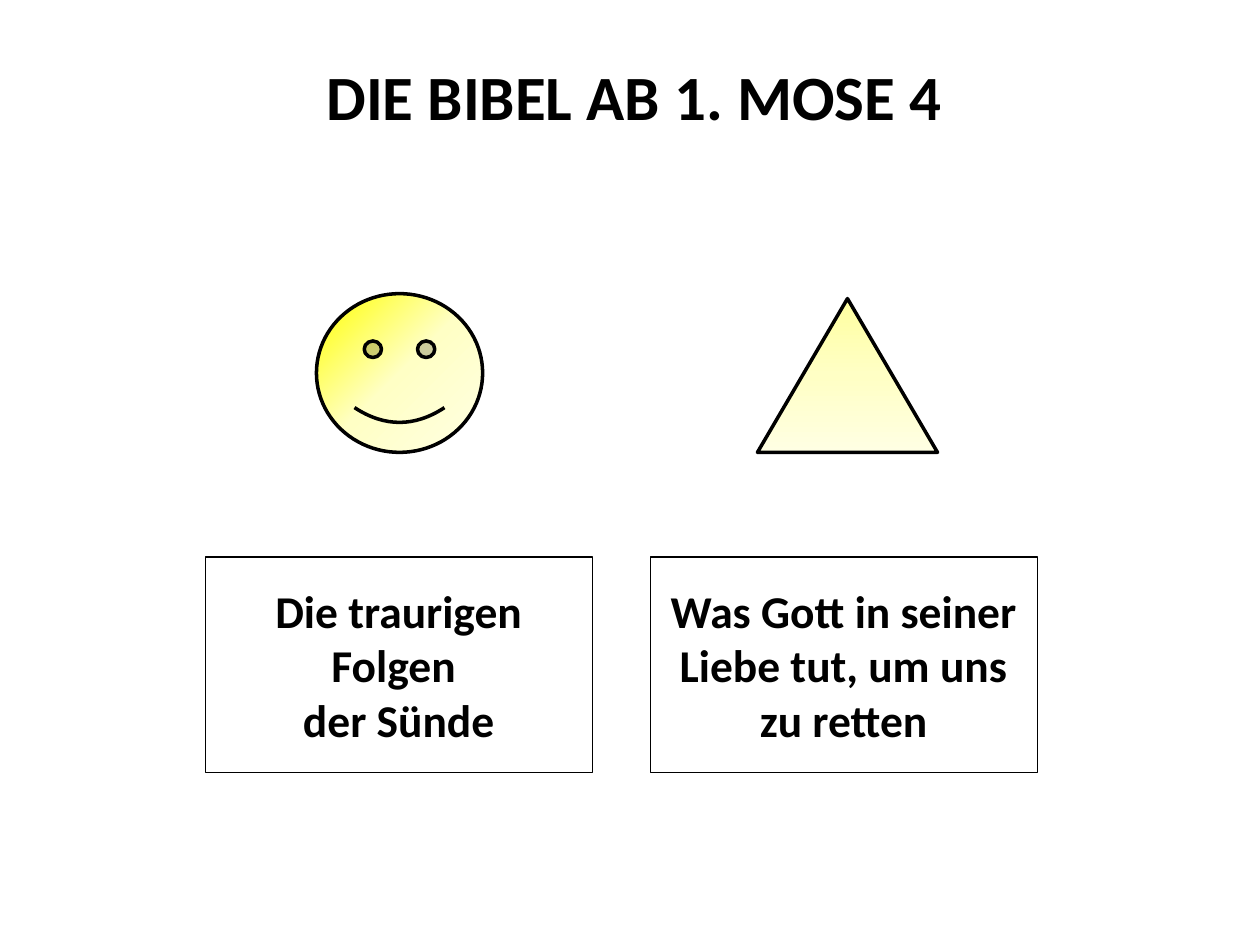
import pptx
import pptx.util
import pptx.oxml
import pptx.oxml.ns
import pptx.dml.color
import pptx.enum.shapes
import pptx.enum.text
import lxml.etree

Cm = pptx.util.Cm
Pt = pptx.util.Pt
SHAPES = pptx.enum.shapes.MSO_SHAPE
COLORS = {
    "text": "000000",
    "line": "000000",
    "paper": "FFFFFF",
    "yellow": "FFFF00",
    "pale": "FFFFA0",
    "cream": "FFFFC5",
    "ivory": "FFFFE3",
}


def color(name):
    return pptx.dml.color.RGBColor.from_string(COLORS[name])


def write_lines(frame, lines, size):
    frame.word_wrap = True
    frame.vertical_anchor = pptx.enum.text.MSO_ANCHOR.MIDDLE
    para = frame.paragraphs[0]
    para.alignment = pptx.enum.text.PP_ALIGN.CENTER
    for index, line in enumerate(lines):
        if index:
            para.add_line_break()
        span = para.add_run()
        span.text = line
        span.font.name = "Calibri"
        span.font.size = Pt(size)
        span.font.bold = True
        span.font.color.rgb = color("text")


def outline(shape, width):
    shape.shadow.inherit = False
    shape.line.color.rgb = color("line")
    shape.line.width = Pt(width)


def fill_gradient(shape, stops, angle):
    stop_xml = "".join(
        f'<a:gs pos="{index * 50000}"><a:srgbClr val="{COLORS[name]}"/></a:gs>'
        for index, name in enumerate(stops)
    )
    gradient = pptx.oxml.parse_xml(
        f'<a:gradFill {pptx.oxml.ns.nsdecls("a")} rotWithShape="1">'
        f'<a:gsLst>{stop_xml}</a:gsLst>'
        f'<a:lin ang="{angle * 60000}" scaled="0"/></a:gradFill>'
    )
    geometry = shape._element.spPr.find(pptx.oxml.ns.qn("a:prstGeom"))
    geometry.addnext(gradient)


def place_title(page, left, top, width, height):
    title = page.shapes.title
    title.left, title.top = Cm(left), Cm(top)
    title.width, title.height = Cm(width), Cm(height)
    title.fill.solid()
    title.fill.fore_color.rgb = color("paper")
    paper = title._element.spPr.find(".//" + pptx.oxml.ns.qn("a:srgbClr"))
    lxml.etree.SubElement(paper, pptx.oxml.ns.qn("a:alpha"), val="60000")
    title.text_frame.auto_size = pptx.enum.text.MSO_AUTO_SIZE.NONE
    write_lines(title.text_frame, ["DIE BIBEL AB 1. MOSE 4"], 36)


def place_theme(page, left, top, width, height, theme):
    inset_x, inset_y, symbol_width, symbol_height = theme["inset"]
    symbol = page.shapes.add_shape(
        theme["symbol"], Cm(left + inset_x), Cm(top + inset_y),
        Cm(symbol_width), Cm(symbol_height),
    )
    outline(symbol, 2)
    fill_gradient(symbol, theme["stops"], theme["angle"])

    caption_height = 4.34
    caption = page.shapes.add_shape(
        SHAPES.RECTANGLE, Cm(left), Cm(top + height - caption_height),
        Cm(width), Cm(caption_height),
    )
    outline(caption, 0.75)
    caption.fill.background()
    frame = caption.text_frame
    frame.margin_left = frame.margin_right = Cm(0.25)
    frame.margin_top = frame.margin_bottom = Cm(0.51)
    frame.auto_size = pptx.enum.text.MSO_AUTO_SIZE.SHAPE_TO_FIT_TEXT
    write_lines(frame, theme["lines"], 26)


THEMES = [
    {
        "symbol": SHAPES.SMILEY_FACE,
        "inset": (2.24, 0, 3.35, 3.2),
        "stops": ("yellow", "cream", "ivory"),
        "angle": 45,
        "lines": ["Die traurigen Folgen ", "der Sünde"],
    },
    {
        "symbol": SHAPES.ISOSCELES_TRIANGLE,
        "inset": (2.16, 0.1, 3.63, 3.1),
        "stops": ("pale", "cream", "ivory"),
        "angle": 90,
        "lines": ["Was Gott in seiner Liebe tut, um uns zu retten"],
    },
]


def main():
    deck = pptx.Presentation()
    deck.slide_width, deck.slide_height = Cm(25.4), Cm(19.05)
    page = deck.slides.add_slide(deck.slide_layouts[5])
    place_title(page, 1.09, 1.12, 23.39, 1.6)
    width, gap = 7.8, 1.17
    for column, theme in enumerate(THEMES):
        place_theme(page, 4.14 + column * (width + gap), 5.92, width, 9.65, theme)
    deck.save("out.pptx")


if __name__ == "__main__":
    main()
